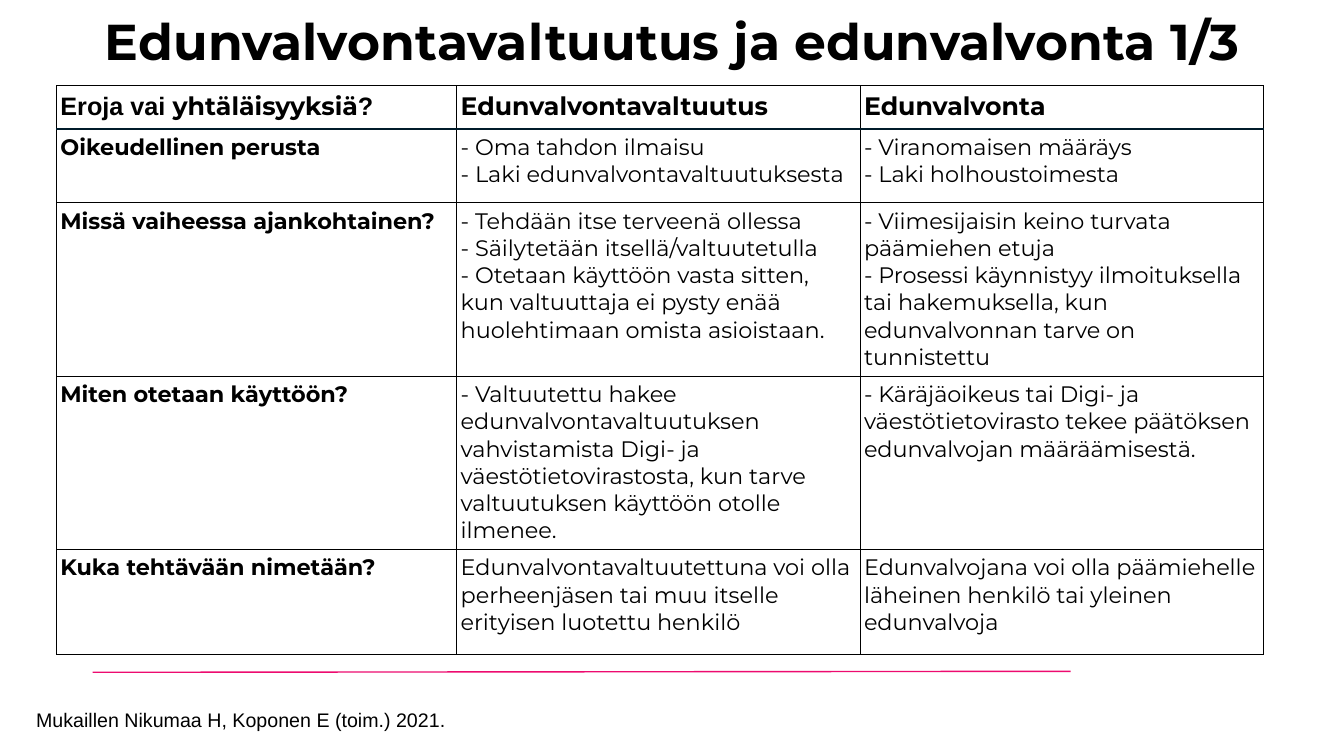
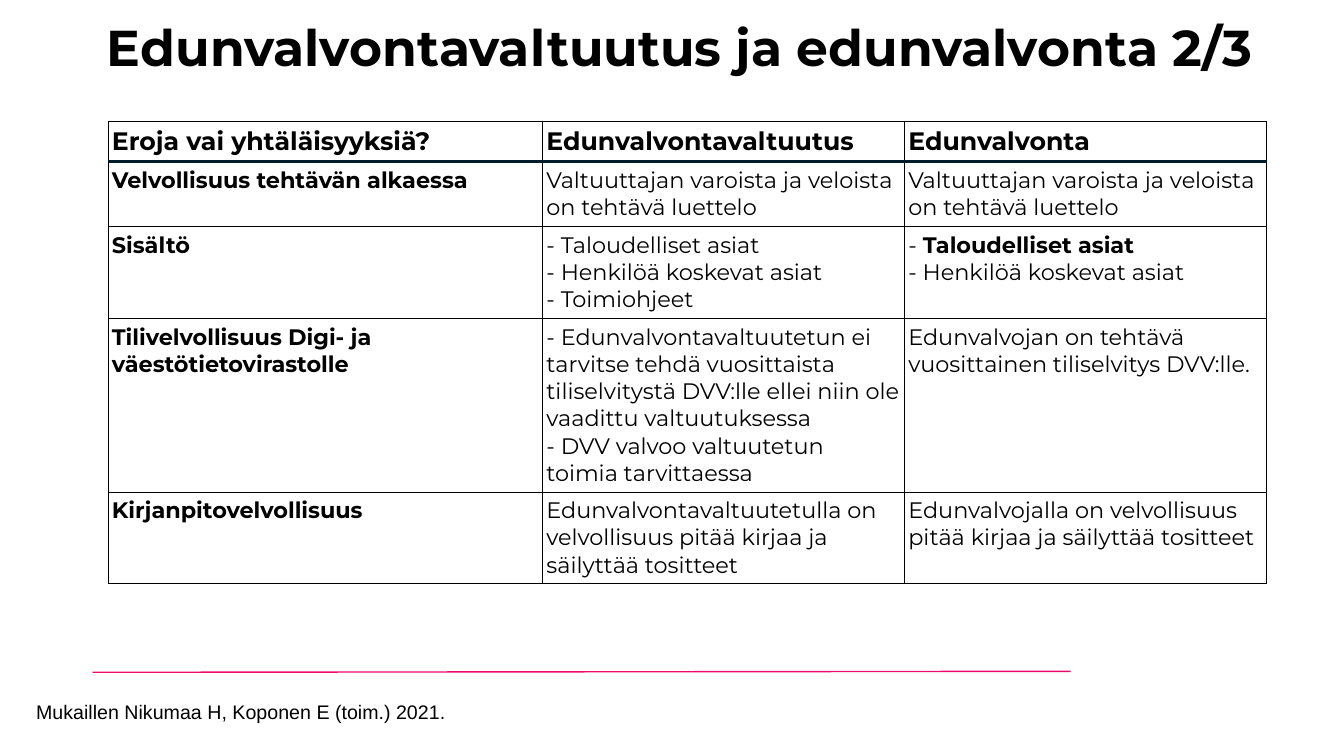
from dataclasses import dataclass

from lxml.etree import SubElement
from pptx import Presentation
from pptx.dml.color import RGBColor
from pptx.enum.shapes import MSO_CONNECTOR as Connector
from pptx.enum.text import MSO_ANCHOR as Anchor, MSO_AUTO_SIZE as AutoSize, PP_ALIGN as Align
from pptx.oxml import parse_xml
from pptx.oxml.ns import nsdecls, qn
from pptx.util import Inches, Pt


@dataclass(frozen=True)
class Theme:
    ink: str = "000000"
    header_rule: str = "001B2A"
    accent: str = "ED0B6F"
    font: str = "Montserrat"
    plain_font: str = "Arial"
    title_size: float = 36
    header_size: float = 18
    body_size: float = 16
    source_size: float = 14
    grid_width: float = 0.57
    header_rule_width: float = 2.25
    accent_width: float = 1


THEME = Theme()
SOURCE = "Mukaillen Nikumaa H, Koponen E (toim.) 2021."


@dataclass(frozen=True)
class Span:
    text: str
    bold: bool = False
    font: str = THEME.font


class Deck:
    def __init__(self, theme):
        self.theme = theme
        self.presentation = Presentation()
        self.presentation.slide_width = Inches(13.33)
        self.presentation.slide_height = Inches(7.5)
        self.page = None

    def add_page(self, title, title_height, source_top):
        self.page = self.presentation.slides.add_slide(self.presentation.slide_layouts[5])
        self.add_title(title, title_height)
        self.add_accent_line()
        self.add_source(source_top)

    def add_span(self, paragraph, span, size):
        run = paragraph.add_run()
        run.text = span.text
        run.font.name = span.font
        run.font.size = Pt(size)
        run.font.bold = span.bold
        run.font.color.rgb = RGBColor.from_string(self.theme.ink)

    def add_title(self, text, height):
        title = self.page.shapes.title
        title.left, title.top = Inches(0.67), Inches(0)
        title.width, title.height = Inches(12), Inches(height)
        frame = title.text_frame
        frame.margin_left = frame.margin_right = Inches(0)
        frame.margin_top = frame.margin_bottom = Inches(0)
        frame.vertical_anchor = Anchor.MIDDLE
        frame.auto_size = AutoSize.NONE
        frame.word_wrap = True
        paragraph = frame.paragraphs[0]
        paragraph.alignment = Align.CENTER
        self.add_span(paragraph, Span(text, bold=True), self.theme.title_size)

    def add_accent_line(self):
        line = self.page.shapes.add_connector(
            Connector.STRAIGHT, Inches(10.62), Inches(6.66), Inches(0.92), Inches(6.67))
        line.line.color.rgb = RGBColor.from_string(self.theme.accent)
        line.line.width = Pt(self.theme.accent_width)
        SubElement(line.element.spPr, qn("a:effectLst"))

    def add_source(self, top):
        box = self.page.shapes.add_textbox(Inches(0.26), Inches(top), Inches(4.27), Inches(0.32))
        box.text_frame.word_wrap = True
        span = Span(SOURCE, font=self.theme.plain_font)
        self.add_span(box.text_frame.paragraphs[0], span, self.theme.source_size)

    def add_table(self, left, top, widths, heights, rows):
        table = self.page.shapes.add_table(
            len(heights), len(widths), Inches(left), Inches(top),
            Inches(sum(widths)), Inches(sum(heights))).table
        table.first_row = table.horz_banding = False
        for column, width in zip(table.columns, widths):
            column.width = Inches(width)
        for row, height in zip(table.rows, heights):
            row.height = Inches(height)
        for row_index, row in enumerate(rows):
            for column_index, paragraphs in enumerate(row):
                cell = table.cell(row_index, column_index)
                self.style_cell(cell, row_index)
                self.fill_cell(cell, paragraphs, row_index == 0, row_index == 0 or column_index == 0)

    def style_cell(self, cell, row_index):
        cell.margin_left = cell.margin_right = Inches(0.04)
        cell.margin_top = cell.margin_bottom = Inches(0.05)
        cell.vertical_anchor = Anchor.TOP
        cell.fill.background()
        grid = (self.theme.ink, self.theme.grid_width)
        rule = (self.theme.header_rule, self.theme.header_rule_width)
        borders = {
            "lnL": grid,
            "lnR": grid,
            "lnT": rule if row_index == 1 else grid,
            "lnB": rule if row_index == 0 else grid,
        }
        properties = cell._tc.get_or_add_tcPr()
        for position, (side, (color, width)) in enumerate(borders.items()):
            properties.insert(position, parse_xml(
                f'<a:{side} {nsdecls("a")} w="{Pt(width)}"><a:solidFill>'
                f'<a:srgbClr val="{color}"/></a:solidFill></a:{side}>'))

    def fill_cell(self, cell, paragraphs, is_header, bold):
        size = self.theme.header_size if is_header else self.theme.body_size
        frame = cell.text_frame
        frame.word_wrap = True
        for index, content in enumerate(paragraphs):
            paragraph = frame.add_paragraph() if index else frame.paragraphs[0]
            spans = [Span(content, bold)] if isinstance(content, str) else content
            for span in spans:
                self.add_span(paragraph, span, size)


HEADINGS = [["Edunvalvontavaltuutus"], ["Edunvalvonta"]]

BASIS_ROWS = [
    [[[Span("Eroja vai ", True, THEME.plain_font), Span("yhtäläisyyksiä", True),
       Span("?", True, THEME.plain_font)]], *HEADINGS],
    [["Oikeudellinen perusta"],
     ["- Oma tahdon ilmaisu", "- Laki edunvalvontavaltuutuksesta"],
     ["- Viranomaisen määräys", "- Laki holhoustoimesta"]],
    [["Missä vaiheessa ajankohtainen?"],
     ["- Tehdään itse terveenä ollessa", "- Säilytetään itsellä/valtuutetulla",
      "- Otetaan käyttöön vasta sitten, kun valtuuttaja ei pysty enää huolehtimaan omista asioistaan."],
     ["- Viimesijaisin keino turvata päämiehen etuja",
      "- Prosessi käynnistyy ilmoituksella tai hakemuksella, kun edunvalvonnan tarve on tunnistettu"]],
    [["Miten otetaan käyttöön?"],
     ["- Valtuutettu hakee edunvalvontavaltuutuksen vahvistamista Digi- ja "
      "väestötietovirastosta, kun tarve valtuutuksen käyttöön otolle ilmenee."],
     ["- Käräjäoikeus tai Digi- ja väestötietovirasto tekee päätöksen edunvalvojan määräämisestä."]],
    [["Kuka tehtävään nimetään?"],
     ["Edunvalvontavaltuutettuna voi olla perheenjäsen tai muu itselle erityisen luotettu henkilö"],
     ["Edunvalvojana voi olla päämiehelle läheinen henkilö tai yleinen edunvalvoja"]],
]

INVENTORY = ["Valtuuttajan varoista ja veloista on tehtävä luettelo"]

DUTY_ROWS = [
    [["Eroja vai yhtäläisyyksiä?"], *HEADINGS],
    [["Velvollisuus tehtävän alkaessa"], INVENTORY, INVENTORY],
    [["Sisältö"],
     ["- Taloudelliset asiat", "- Henkilöä koskevat asiat", "- Toimiohjeet"],
     [[Span("- "), Span("Taloudelliset asiat", True)], "- Henkilöä koskevat asiat"]],
    [["Tilivelvollisuus Digi- ja väestötietovirastolle"],
     ["- Edunvalvontavaltuutetun ei tarvitse tehdä vuosittaista tiliselvitystä DVV:lle "
      "ellei niin ole vaadittu valtuutuksessa",
      "- DVV valvoo valtuutetun toimia tarvittaessa"],
     ["Edunvalvojan on tehtävä vuosittainen tiliselvitys DVV:lle."]],
    [["Kirjanpitovelvollisuus"],
     ["Edunvalvontavaltuutetulla on velvollisuus pitää kirjaa ja säilyttää tositteet"],
     ["Edunvalvojalla on velvollisuus pitää kirjaa ja säilyttää tositteet"]],
]


def main():
    deck = Deck(THEME)
    deck.add_page("Edunvalvontavaltuutus ja edunvalvonta 1/3", 0.8, 6.97)
    deck.add_table(0.56, 0.85, [3.97, 4, 4], [0.43, 0.73, 1.72, 1.72, 1.04], BASIS_ROWS)
    deck.add_page(" Edunvalvontavaltuutus ja edunvalvonta 2/3", 0.92, 6.89)
    deck.add_table(1.07, 1.2, [4.31, 3.59, 3.59], [0.4, 0.65, 0.91, 1.72, 0.91], DUTY_ROWS)
    deck.presentation.save("out.pptx")


if __name__ == "__main__":
    main()
